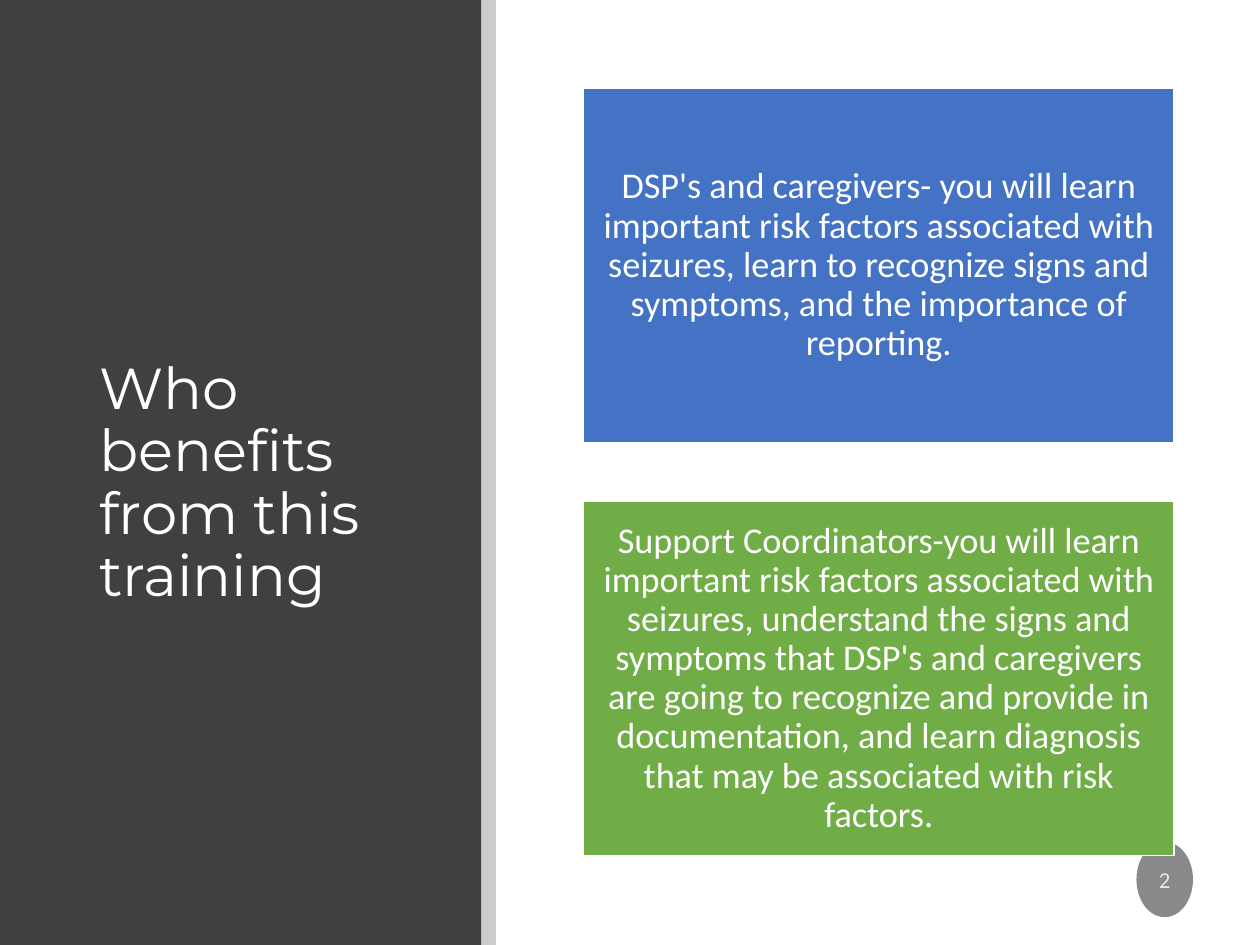
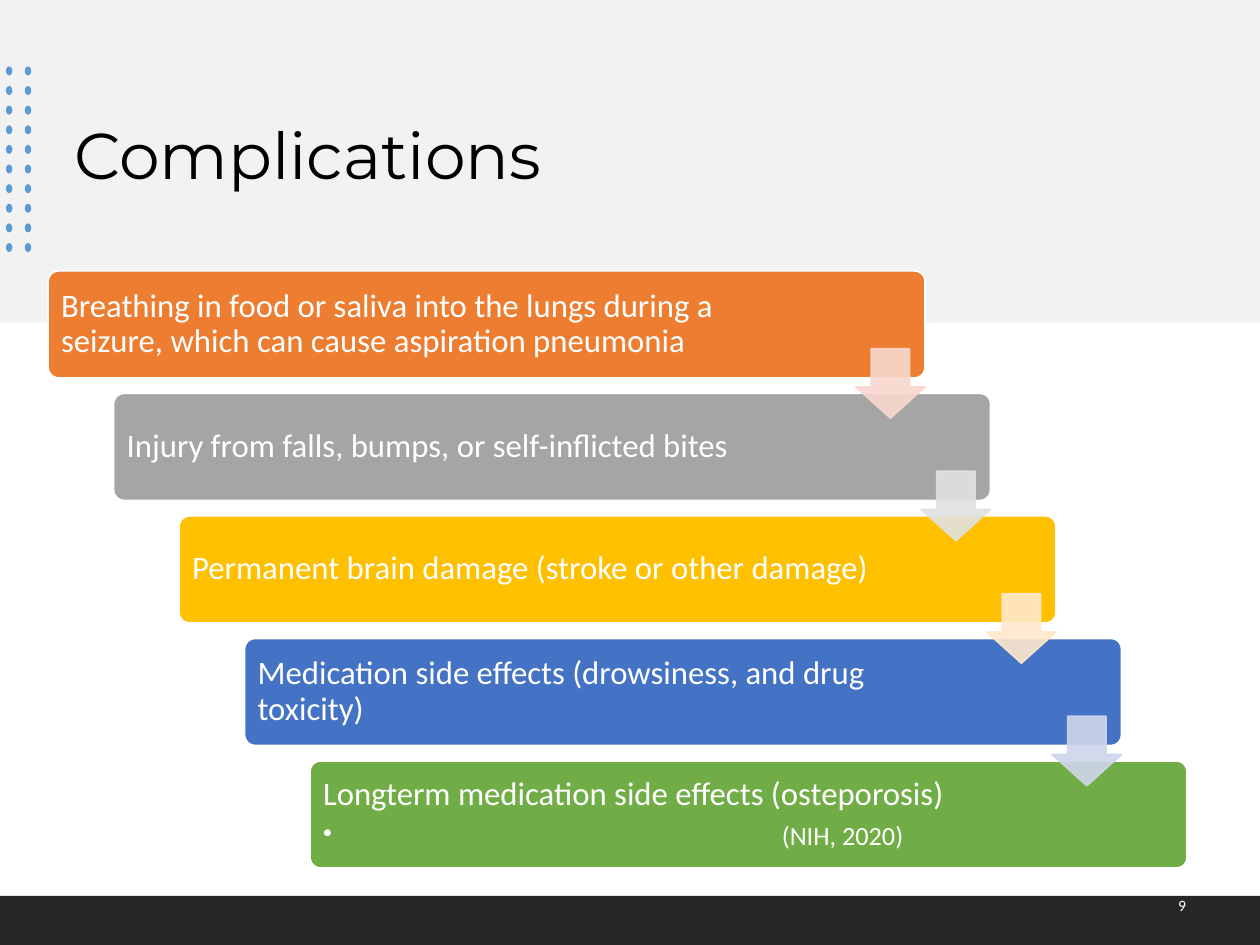
import pptx
import pptx.util
import pptx.dml.color
import pptx.enum.shapes
import pptx.enum.text
import pptx.oxml.ns
import lxml.etree
from dataclasses import dataclass

Cm = pptx.util.Cm
Pt = pptx.util.Pt
Shape = pptx.enum.shapes.MSO_SHAPE
Align = pptx.enum.text.PP_ALIGN
Anchor = pptx.enum.text.MSO_ANCHOR
qn = pptx.oxml.ns.qn


@dataclass(frozen=True)
class Theme:
    heading: str = "Montserrat"
    body: str = "Calibri"
    white: str = "FFFFFF"
    black: str = "000000"
    panel: str = "404040"
    header: str = "F2F2F2"
    footer: str = "262626"
    badge: str = "898989"
    badge_text: str = "E7E7E7"
    dot: str = "5B9BD5"
    orange: str = "ED7D31"
    grey: str = "A5A5A5"
    gold: str = "FFC000"
    blue: str = "4472C4"
    green: str = "70AD47"
    side_title: float = 33
    top_title: float = 37
    card: float = 20.7
    step: float = 18.7
    citation: float = 15
    badge_number: float = 13
    footer_number: float = 9


THEME = Theme()
WIDTH, HEIGHT = 25.4, 19.05

AUDIENCES = [
    ("DSP's and caregivers- you will learn important risk factors associated with "
     "seizures, learn to recognize signs and symptoms, and the importance of reporting.",
     THEME.blue),
    ("Support Coordinators-you will learn important risk factors associated with "
     "seizures, understand the signs and symptoms that DSP's and caregivers are going "
     "to recognize and provide in documentation, and learn diagnosis that may be "
     "associated with risk factors.", THEME.green),
]

COMPLICATIONS = [
    ("Breathing in food or saliva into the lungs during a seizure, which can cause "
     "aspiration pneumonia", THEME.orange, "F8D7CE"),
    ("Injury from falls, bumps, or self-inflicted bites", THEME.grey, "E1E1E1"),
    ("Permanent brain damage (stroke or other damage)", THEME.gold, "FFE8CC"),
    ("Medication side effects (drowsiness, and drug toxicity)", THEME.blue, "CFD5EA"),
    ("Longterm medication side effects (osteporosis)", THEME.green, None),
]
CITATION = "(NIH, 2020)"


def rgb(value):
    return pptx.dml.color.RGBColor.from_string(value)


def add_block(page, kind, place, fill, line=None, alpha=None):
    shape = page.shapes.add_shape(kind, *map(Cm, place))
    shape.shadow.inherit = False
    shape.fill.solid()
    shape.fill.fore_color.rgb = rgb(fill)
    if line:
        shape.line.color.rgb = rgb(line)
        shape.line.width = Pt(1)
    else:
        shape.line.fill.background()
    if alpha:
        for color in shape.element.spPr.iter(qn("a:srgbClr")):
            lxml.etree.SubElement(color, qn("a:alpha"), val=str(alpha * 1000))
    return shape


def set_margins(frame, margin, right=None):
    frame.margin_left = frame.margin_top = frame.margin_bottom = Cm(margin)
    frame.margin_right = Cm(margin if right is None else right)


def style(para, size, color=THEME.white, font=THEME.body, align=Align.LEFT, spacing=0.9):
    para.alignment = align
    para.line_spacing = spacing
    para.font.name = font
    para.font.size = Pt(size)
    para.font.color.rgb = rgb(color)


def write(frame, text, size, **options):
    frame.word_wrap = True
    frame.vertical_anchor = Anchor.MIDDLE
    frame.text = text
    style(frame.paragraphs[0], size, **options)


def place_title(page, text, place, size, color):
    title = page.shapes.title
    title.left, title.top, title.width, title.height = map(Cm, place)
    write(title.text_frame, text, size, color=color, font=THEME.heading)
    title.text_frame.auto_size = pptx.enum.text.MSO_AUTO_SIZE.NONE
    title.element.getparent().append(title.element)


def add_citation(frame):
    frame.paragraphs[0].space_after = Pt(6)
    para = frame.add_paragraph()
    para.level = 1
    para.text = CITATION
    properties = para._p.get_or_add_pPr()
    indent = Cm(9.25)
    properties.set("marL", str(indent))
    properties.set("indent", str(-indent))
    lxml.etree.SubElement(properties, qn("a:buChar"), char="•")
    style(para, THEME.citation)


def build_audience(page):
    panel_width, strip_width = 9.7, 0.3
    add_block(page, Shape.RECTANGLE, (0, 0, panel_width, HEIGHT), THEME.panel)
    place_title(page, "Who benefits from this training", (1.75, 2.26, 6.96, 15.01),
                THEME.side_title, THEME.white)
    add_block(page, Shape.RECTANGLE, (panel_width, 0, strip_width, HEIGHT),
              THEME.black, alpha=20)

    badge = add_block(page, Shape.OVAL, (22.91, 16.97, 1.14, 1.52), THEME.badge)
    set_margins(badge.text_frame, 0)
    write(badge.text_frame, "2", THEME.badge_number, color=THEME.badge_text,
          align=Align.CENTER, spacing=1.0)

    left, top, width, height, gap = 11.76, 1.78, 11.91, 7.14, 1.19
    for index, (text, fill) in enumerate(AUDIENCES):
        place = (left, top + index * (height + gap), width, height)
        card = add_block(page, Shape.RECTANGLE, place, fill, THEME.white)
        set_margins(card.text_frame, 0.23)
        write(card.text_frame, text, THEME.card, align=Align.CENTER)


def add_dots(page):
    rows, columns = 10, 2
    row_step, column_step = 3.56 / (rows - 1), 0.38
    for row in range(rows):
        for column in range(columns):
            place = (0.12 + column * column_step, 1.34 + row * row_step, 0.13, 0.18)
            add_block(page, Shape.OVAL, place, THEME.dot)


def add_staircase(page):
    left, top, width, height = 0.97, 5.46, 17.68, 2.16
    step_x, step_y = 1.32, 2.47
    arrow_size, arrow_drop = 1.4, 1.57
    corners = [(left + index * step_x, top + index * step_y)
               for index in range(len(COMPLICATIONS))]
    for (x, y), (text, fill, _) in zip(corners, COMPLICATIONS):
        bar = add_block(page, Shape.ROUNDED_RECTANGLE, (x, y, width, height),
                        fill, THEME.white)
        bar.adjustments[0] = 0.1
        set_margins(bar.text_frame, 0.2, right=2.92)
        write(bar.text_frame, text, THEME.step)
    add_citation(bar.text_frame)

    for (x, y), (_, _, tint) in zip(corners, COMPLICATIONS):
        if tint:
            place = (x + width - arrow_size, y + arrow_drop, arrow_size, arrow_size)
            arrow = add_block(page, Shape.DOWN_ARROW, place, tint, tint, alpha=90)
            arrow.adjustments[0] = 0.55
            arrow.adjustments[1] = 0.45


def build_complications(page):
    add_block(page, Shape.RECTANGLE, (0, 0, WIDTH, 6.5), THEME.header)
    place_title(page, "Complications", (1.24, 0.94, 22.94, 4.5),
                THEME.top_title, THEME.black)
    add_dots(page)

    footer_height = 0.99
    footer_top = HEIGHT - footer_height
    add_block(page, Shape.RECTANGLE, (0, footer_top, WIDTH, footer_height), THEME.footer)
    number = page.shapes.add_textbox(Cm(18.44), Cm(footer_top), Cm(5.72), Cm(footer_height))
    write(number.text_frame, "9", THEME.footer_number, align=Align.RIGHT, spacing=1.0)
    number.text_frame.vertical_anchor = Anchor.TOP
    number.text_frame.margin_top = 0

    add_staircase(page)


def main():
    deck = pptx.Presentation()
    deck.slide_width, deck.slide_height = Cm(WIDTH), Cm(HEIGHT)
    title_only = deck.slide_layouts[5]
    for build in (build_audience, build_complications):
        build(deck.slides.add_slide(title_only))
    deck.save("out.pptx")


if __name__ == "__main__":
    main()
